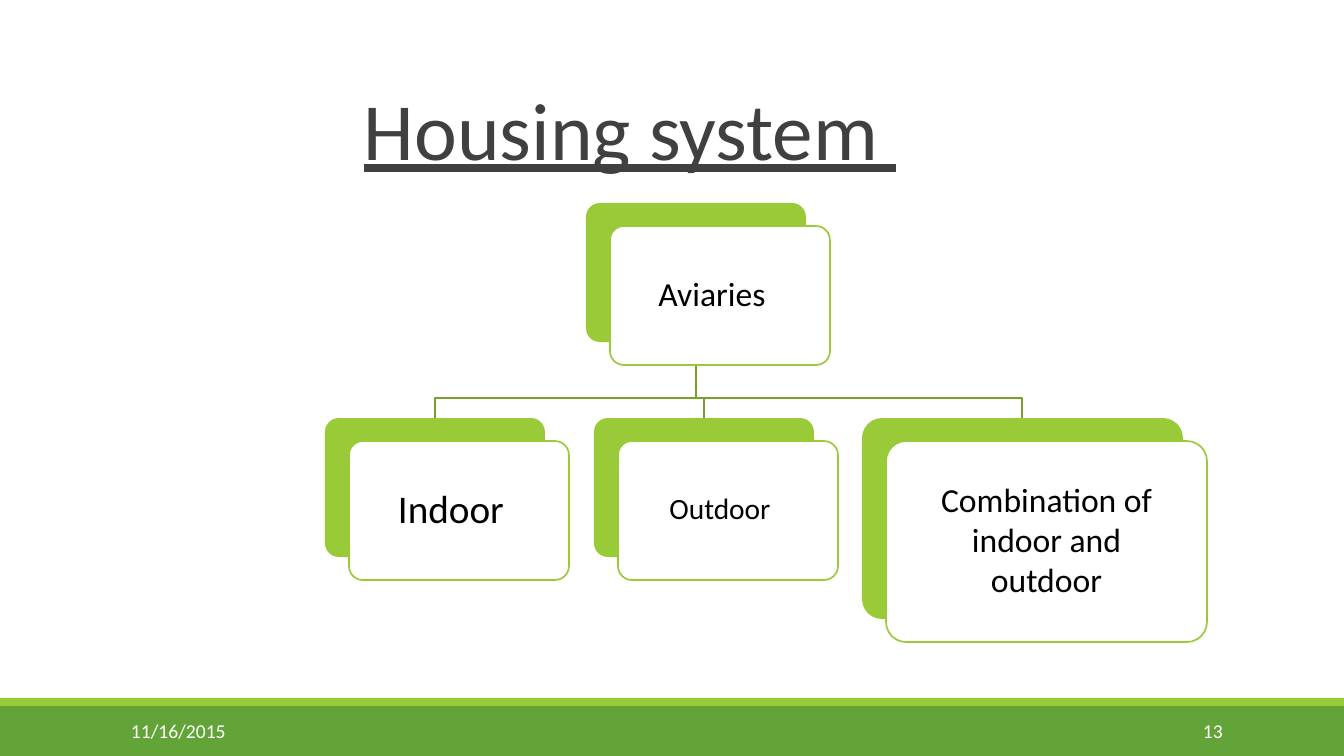
from dataclasses import dataclass

import pptx
import pptx.dml.color
import pptx.enum.shapes
import pptx.enum.text
import pptx.oxml
import pptx.oxml.ns
import pptx.util

EMU_PER_PX = 914400 / 100.8
SLIDE_WIDTH, SLIDE_HEIGHT = 1344, 756
FONT = "Calibri"
COLORS = {
    "band": "62A437",
    "lime": "99CA38",
    "branch": "79A02B",
    "title": "404040",
    "text": "000000",
    "white": "FFFFFF",
}
CARD_SHIFT = (24, 23)
CORNER = 0.1
LINE_WIDTH = 1.2
ALIGN = pptx.enum.text.PP_ALIGN
ANCHOR = pptx.enum.text.MSO_ANCHOR


@dataclass(frozen=True)
class Card:
    text: str
    left: int
    top: int
    size: int
    width: int = 220
    height: int = 139
    insets: tuple[int, int, int, int] = (0, 0, 16, 5)


@dataclass(frozen=True)
class Label:
    text: str
    left: int
    top: int
    width: int
    height: int
    size: int
    color: str
    underline: bool = False
    tab: int = 0


ROOT = Card("Aviaries", 586, 203, 24)
CHILDREN = [
    Card("Indoor", 325, 418, 28),
    Card("Outdoor", 594, 418, 21),
    Card("Combination of indoor and outdoor", 862, 418, 24,
         width=321, height=201, insets=(48, 0, 48, 5)),
]
LABELS = [
    Label("\tHousing system ", 131, 79, 1116, 99, 58, "title", underline=True, tab=233),
    Label("11/16/2015", 131, 719, 114, 25, 14, "white"),
    Label("13", 1203, 719, 28, 25, 14, "white"),
]


def px(length: float) -> pptx.util.Emu:
    return pptx.util.Emu(round(length * EMU_PER_PX))


def rgb(name: str) -> pptx.dml.color.RGBColor:
    return pptx.dml.color.RGBColor.from_string(COLORS[name])


def write_text(shape, text: str, *, size: int, color: str = "text", align=ALIGN.LEFT,
               anchor=ANCHOR.TOP, insets: tuple[int, int, int, int] = (0, 0, 0, 0),
               underline: bool = False, tab: int = 0) -> None:
    frame = shape.text_frame
    frame.word_wrap = True
    frame.vertical_anchor = anchor
    (frame.margin_left, frame.margin_top,
     frame.margin_right, frame.margin_bottom) = map(px, insets)
    paragraph = frame.paragraphs[0]
    paragraph.alignment = align
    run = paragraph.add_run()
    run.text = text
    run.font.name = FONT
    run.font.size = pptx.util.Pt(size)
    run.font.color.rgb = rgb(color)
    run.font.underline = underline
    if tab:
        namespace = pptx.oxml.ns.nsdecls("a")
        tab_list = f'<a:tabLst {namespace}><a:tab pos="{px(tab)}" algn="l"/></a:tabLst>'
        paragraph._p.get_or_add_pPr().append(pptx.oxml.parse_xml(tab_list))


def add_box(slide, left: int, top: int, width: int, height: int, fill: str,
            *, line: str = "", rounded: bool = False):
    kinds = pptx.enum.shapes.MSO_SHAPE
    kind = kinds.ROUNDED_RECTANGLE if rounded else kinds.RECTANGLE
    shape = slide.shapes.add_shape(kind, px(left), px(top), px(width), px(height))
    shape.shadow.inherit = False
    shape.fill.solid()
    shape.fill.fore_color.rgb = rgb(fill)
    if rounded:
        shape.adjustments[0] = CORNER
    if line:
        shape.line.color.rgb = rgb(line)
        shape.line.width = pptx.util.Pt(LINE_WIDTH)
    else:
        shape.line.fill.background()
    return shape


def add_card(slide, card: Card) -> None:
    add_box(slide, card.left, card.top, card.width, card.height, "lime", rounded=True)
    front = add_box(slide, card.left + CARD_SHIFT[0], card.top + CARD_SHIFT[1],
                    card.width, card.height, "white", line="lime", rounded=True)
    write_text(front, card.text, size=card.size, align=ALIGN.CENTER,
               anchor=ANCHOR.MIDDLE, insets=card.insets)


def add_branch(slide, parent: Card, child: Card) -> None:
    start_x, start_y = parent.left + parent.width // 2, parent.top + parent.height
    end_x = child.left + child.width // 2
    bend_y = child.top - 20
    builder = slide.shapes.build_freeform(start_x, start_y, scale=EMU_PER_PX)
    builder.add_line_segments(
        [(start_x, bend_y), (end_x, bend_y), (end_x, child.top)], close=False)
    branch = builder.convert_to_shape()
    branch.shadow.inherit = False
    branch.fill.background()
    branch.line.color.rgb = rgb("branch")
    branch.line.width = pptx.util.Pt(LINE_WIDTH)


def add_label(slide, label: Label) -> None:
    box = slide.shapes.add_textbox(
        px(label.left), px(label.top), px(label.width), px(label.height))
    write_text(box, label.text, size=label.size, color=label.color,
               underline=label.underline, tab=label.tab)


def main() -> None:
    presentation = pptx.Presentation()
    presentation.slide_width = px(SLIDE_WIDTH)
    presentation.slide_height = px(SLIDE_HEIGHT)
    slide = presentation.slides.add_slide(presentation.slide_layouts[6])

    # Footer bands
    add_box(slide, 0, 706, SLIDE_WIDTH, 50, "band")
    add_box(slide, 0, 698, SLIDE_WIDTH, 8, "lime")

    # Hierarchy: branches lie behind the cards
    for child in reversed(CHILDREN):
        add_branch(slide, ROOT, child)
    for card in [ROOT, *CHILDREN]:
        add_card(slide, card)

    # Title, date and slide number
    for label in LABELS:
        add_label(slide, label)

    presentation.save("out.pptx")


if __name__ == "__main__":
    main()
